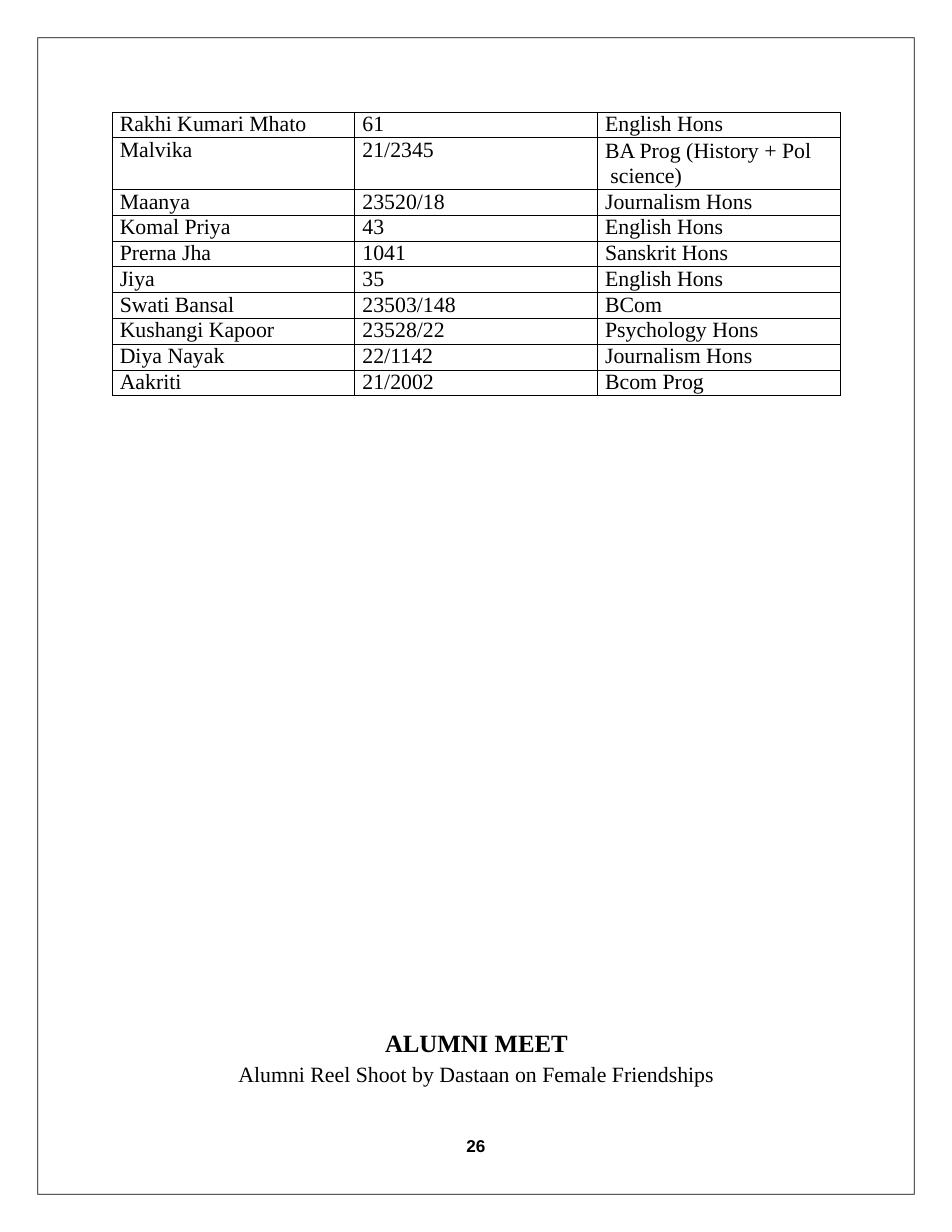
from collections import namedtuple
from lxml import etree
from pptx import Presentation
from pptx.dml.color import RGBColor
from pptx.enum import text
from pptx.oxml import ns
from pptx.util import Pt

Theme = namedtuple("Theme", "ink serif sans head body page rule")
theme = Theme(RGBColor(0, 0, 0), "Times New Roman", "Arial", 16, 14, 11, 0.5)


def style(para, size, font=theme.serif, bold=False):
    for run in para.runs:
        run.font.size = Pt(size)
        run.font.name = font
        run.font.bold = bold
        run.font.color.rgb = theme.ink


def border(cell):
    props = cell._tc.get_or_add_tcPr()
    for i, side in enumerate(("a:lnL", "a:lnR", "a:lnT", "a:lnB")):
        line = etree.Element(ns.qn(side), w=str(Pt(theme.rule)))
        fill = etree.SubElement(line, ns.qn("a:solidFill"))
        etree.SubElement(fill, ns.qn("a:srgbClr"), val=str(theme.ink))
        props.insert(i, line)


prs = Presentation()
prs.slide_width, prs.slide_height = Pt(612), Pt(792)
slide = prs.slides.add_slide(prs.slide_layouts[6])

# Student table
students = [
    ("Rakhi Kumari Mhato", "61", "English Hons"),
    ("Malvika", "21/2345", "BA Prog (History + Pol\v science)"),
    ("Maanya", "23520/18", "Journalism Hons"),
    ("Komal Priya", "43", "English Hons"),
    ("Prerna Jha", "1041", "Sanskrit Hons"),
    ("Jiya", "35", "English Hons"),
    ("Swati Bansal", "23503/148", "BCom"),
    ("Kushangi Kapoor", "23528/22", "Psychology Hons"),
    ("Diya Nayak", "22/1142", "Journalism Hons"),
    ("Aakriti", "21/2002", "Bcom Prog"),
]
high = 16.6
table = slide.shapes.add_table(
    len(students), 3, Pt(72), Pt(72), Pt(468), Pt(high * 11)).table
table.first_row = table.horz_banding = False
for col in table.columns:
    col.width = Pt(156)
for r, student in enumerate(students):
    tall = "\v" in student[2]
    table.rows[r].height = Pt(high * 2 if tall else high)
    for c, value in enumerate(student):
        cell = table.cell(r, c)
        cell.margin_left = Pt(5)
        cell.margin_right = cell.margin_top = cell.margin_bottom = 0
        cell.fill.background()
        border(cell)
        para = cell.text_frame.paragraphs[0]
        para.text = value
        para.line_spacing = Pt(16.2 if "\v" in value else 15.6)
        style(para, theme.body)

# Alumni heading
box = slide.shapes.add_textbox(Pt(152.6), Pt(658), Pt(307.4), Pt(42))
frame = box.text_frame
frame.word_wrap = True
frame.margin_left = frame.margin_right = frame.margin_bottom = 0
frame.margin_top = Pt(2.9)
frame.text = "ALUMNI MEET\nAlumni Reel Shoot by Dastaan on Female Friendships"
title, line = frame.paragraphs
for para, gap in ((title, 2.9), (line, 1.8)):
    para.alignment = text.PP_ALIGN.CENTER
    para.space_before = Pt(gap)
style(title, theme.head, bold=True)
style(line, theme.body)

# Page border: outer edge, then inner edge as a hole
left, top, right, foot = 24, 24, 588, 768
thin = theme.rule
pen = slide.shapes.build_freeform(Pt(left), Pt(top))
pen.add_line_segments(
    [(Pt(right), Pt(top)), (Pt(right), Pt(foot)), (Pt(left), Pt(foot))])
pen.move_to(Pt(left + thin), Pt(top + thin))
pen.add_line_segments([
    (Pt(left + thin), Pt(foot - thin)),
    (Pt(right - thin), Pt(foot - thin)),
    (Pt(right - thin), Pt(top + thin))])
edge = pen.convert_to_shape()
edge.shadow.inherit = False
edge.fill.solid()
edge.fill.fore_color.rgb = theme.ink
edge.line.fill.background()

# Page number
box = slide.shapes.add_textbox(Pt(296.8), Pt(730), Pt(18), Pt(14.4))
frame = box.text_frame
frame.word_wrap = True
frame.margin_left = Pt(3)
frame.margin_right = frame.margin_top = frame.margin_bottom = 0
frame.text = "26"
style(frame.paragraphs[0], theme.page, theme.sans, True)

prs.save("out.pptx")
